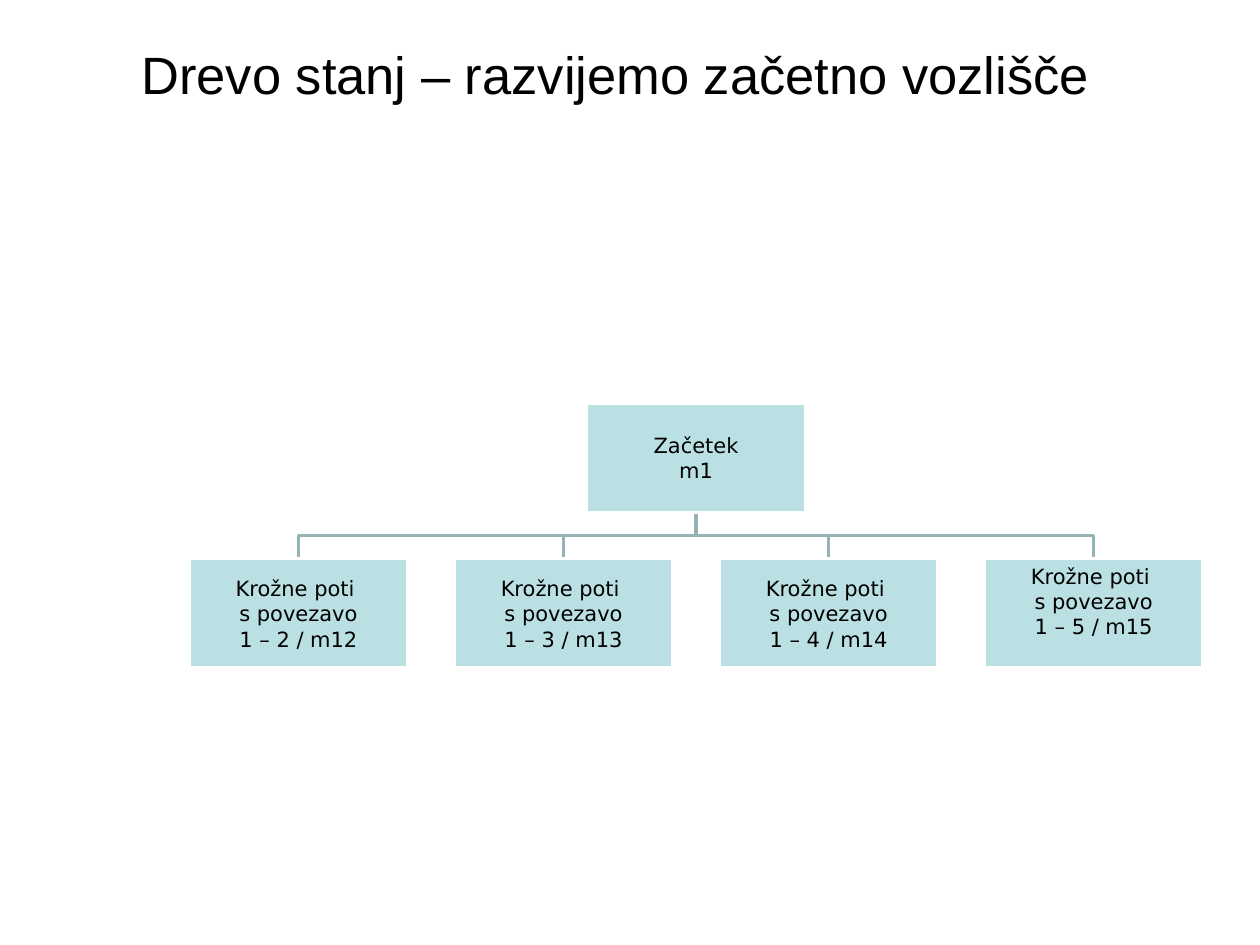
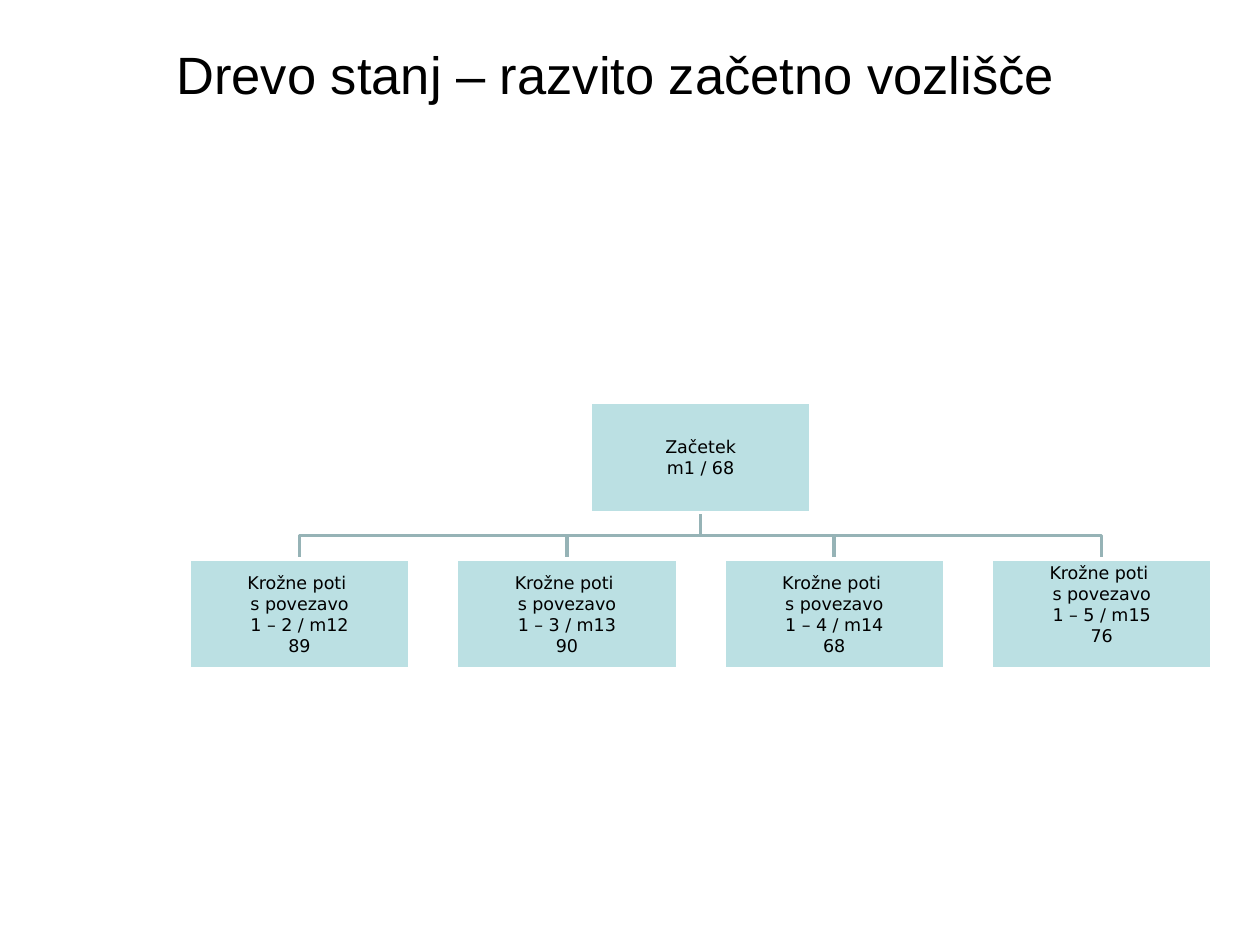
import pptx
import pptx.dml.color
import pptx.enum.shapes
import pptx.enum.text
import pptx.util

Inches = pptx.util.Inches
Pt = pptx.util.Pt
COLORS = {"text": "000000", "node": "BBE0E3", "border": "FFFFFF", "branch": "96B3B6"}
TITLE_FONT, NODE_FONT = "Arial", "DejaVu Sans"
GAP = 0.21           # gap between nodes and between levels, per node width
LINE_HEIGHT = 1.2    # per text size
ROUTES = ["1 – 2 / m12", "1 – 3 / m13", "1 – 4 / m14", "1 – 5 / m15"]


def rgb(name):
    return pptx.dml.color.RGBColor.from_string(COLORS[name])


def set_line(s, color):
    s.line.color.rgb = rgb(color)
    s.line.width = Pt(2)
    s.shadow.inherit = False


def add_lines(p, lines, font, size):
    """Fill a centred paragraph, one run for each line."""
    p.alignment = pptx.enum.text.PP_ALIGN.CENTER
    for i, line in enumerate(lines):
        if i:
            p.add_line_break()
        r = p.add_run()
        r.text = line
        r.font.name, r.font.size = font, Pt(size)
        r.font.color.rgb = rgb("text")


def add_title(slide, text, left, top, width, height):
    tf = slide.shapes.add_textbox(
        Inches(left), Inches(top), Inches(width), Inches(height)).text_frame
    tf.word_wrap = True
    tf.vertical_anchor = pptx.enum.text.MSO_ANCHOR.MIDDLE
    add_lines(tf.paragraphs[0], [text], TITLE_FONT, 30)


def add_branch(slide, x1, y1, x2, y2):
    """Bent line from the parent's bottom to the child's top."""
    middle = (y1 + y2) / 2
    builder = slide.shapes.build_freeform(Inches(x1), Inches(y1))
    points = [(x1, middle), (x2, middle), (x2, y2)]
    builder.add_line_segments([(Inches(x), Inches(y)) for x, y in points], close=False)
    s = builder.convert_to_shape()
    s.fill.background()
    set_line(s, "branch")


def add_node(slide, paragraphs, size, left, top, width, height, raised=False):
    s = slide.shapes.add_shape(
        pptx.enum.shapes.MSO_SHAPE.RECTANGLE,
        Inches(left), Inches(top), Inches(width), Inches(height))
    s.fill.solid()
    s.fill.fore_color.rgb = rgb("node")
    set_line(s, "border")
    tf = s.text_frame
    tf.word_wrap = True
    tf.vertical_anchor = pptx.enum.text.MSO_ANCHOR.MIDDLE
    tf.margin_left = tf.margin_top = tf.margin_right = tf.margin_bottom = Inches(0.01)
    if raised:  # keep one line free below the text
        tf.margin_bottom += Pt(size * LINE_HEIGHT)
    for i, lines in enumerate(paragraphs):
        p = tf.add_paragraph() if i else tf.paragraphs[0]
        add_lines(p, lines, NODE_FONT, size)


def add_tree(slide, root, children, size, left, top, width):
    """State tree: a root centred over a row of evenly spaced children."""
    count = len(children)
    node_w = width / (count + (count - 1) * GAP)
    node_h = node_w / 2
    gap = node_w * GAP
    child_top = top + node_h + gap
    lefts = [left + i * (node_w + gap) for i in range(count)]
    center = left + width / 2

    # Branches lie behind the nodes
    for x in reversed(lefts):
        add_branch(slide, center, top + node_h, x + node_w / 2, child_top)

    add_node(slide, [root], size, center - node_w / 2, top, node_w, node_h)
    for i, (x, child) in enumerate(zip(lefts, children)):
        add_node(slide, child, size, x, child_top, node_w, node_h,
                 raised=i == count - 1)


def add_tree_slide(prs, title, root, costs, size, top, width):
    slide = prs.slides.add_slide(prs.slide_layouts[6])
    add_title(slide, title, 0.51, 0.21, 8.75, 0.75)
    children = [[["Krožne poti ", "s povezavo", route]] for route in ROUTES]
    for child, cost in zip(children, costs):
        child.append([cost])
    add_tree(slide, root, children, size, 1.5, top, width)


def main():
    prs = pptx.Presentation()
    prs.slide_width, prs.slide_height = Inches(10), Inches(7.5)
    add_tree_slide(prs, "Drevo stanj – razvijemo začetno vozlišče",
                   ["Začetek", "m1"], [], size=12, top=3.2, width=8.05)
    add_tree_slide(prs, "Drevo stanj – razvito začetno vozlišče",
                   ["Začetek", "m1 / 68"], ["89", "90", "68", "76"],
                   size=10, top=3.19, width=8.12)
    prs.save("out.pptx")


if __name__ == "__main__":
    main()
